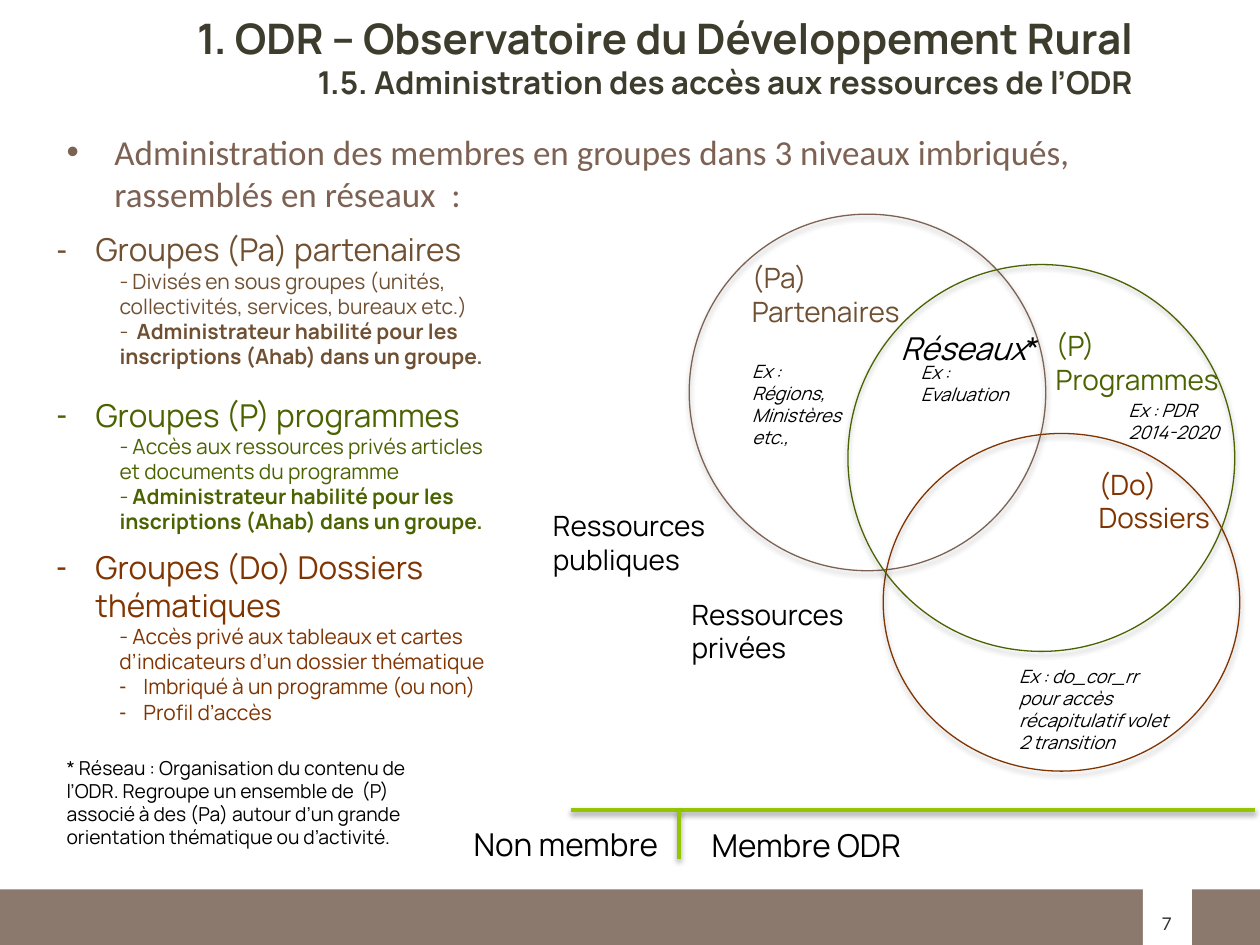
from lxml.etree import SubElement
from pptx import Presentation
from pptx.dml.color import RGBColor
from pptx.enum.shapes import MSO_CONNECTOR, MSO_SHAPE
from pptx.enum.text import MSO_ANCHOR, MSO_AUTO_SIZE, PP_ALIGN
from pptx.oxml.ns import qn
from pptx.util import Inches, Pt

# Grid: 100 columns by 75 rows of square cells
COLS, ROWS = 100, 75
CELL = Inches(10) // COLS
BLACK, WHITE, TAUPE = "000000", "FFFFFF", "7D6253"
BROWN, GREEN, RUST, LIME = "705032", "4A6300", "803400", "94C600"

deck = Presentation()
deck.slide_width, deck.slide_height = COLS * CELL, ROWS * CELL
slide = deck.slides.add_slide(deck.slide_layouts[6])
shapes = slide.shapes


def color(code):
    return RGBColor.from_string(code)


def place(box, x, y, w=0, h=0):
    """Grid lengths inside a box, turned into slide lengths."""
    return [round(n * CELL) for n in (box[0] + x, box[1] + y, w, h)]


def style(run, tone, size, name="Manrope", **form):
    form.update(size=Pt(size), name=name)
    for key, val in form.items():
        setattr(run.font, key, val)
    run.font.color.rgb = color(tone)


def indent(para, left, hang=0, mark=None):
    props = para._p.get_or_add_pPr()
    props.set("marL", str(Inches(left)))
    props.set("indent", str(Inches(-hang)))
    if mark:
        SubElement(props, qn("a:buFont")).set("typeface", "Arial")
        SubElement(props, qn("a:buChar")).set("char", mark)


def frame(box, spot, wrap=True):
    text = shapes.add_textbox(*place(box, *spot)).text_frame
    form = dict(word_wrap=wrap, auto_size=MSO_AUTO_SIZE.NONE,
                vertical_anchor=MSO_ANCHOR.TOP)
    for key, val in form.items():
        setattr(text, key, val)
    return text


def add_para(text, first):
    return text.paragraphs[0] if first else text.add_paragraph()


def label(box, spot, lines, tone, size, wrap=True, align=PP_ALIGN.LEFT, **form):
    text = frame(box, spot, wrap)
    for i, line in enumerate(lines):
        para = add_para(text, i == 0)
        para.alignment = align
        run = para.add_run()
        run.text = line
        style(run, tone, size, **form)
    return text


def shade(shape, alpha, drop):
    fx = SubElement(shape._element.spPr, qn("a:effectLst"))
    glow = SubElement(fx, qn("a:outerShdw"), blurRad=str(Pt(3.1)),
                      dist=str(Pt(drop)), dir="5400000", rotWithShape="0")
    tint = SubElement(glow, qn("a:srgbClr"), val=BLACK)
    SubElement(tint, qn("a:alpha"), val=str(alpha * 1000))


def header(box):
    text = frame(box, (0, 0, box[2], 5.4))
    para = text.paragraphs[0]
    para.alignment = PP_ALIGN.RIGHT
    rows = [("1. ODR – Observatoire du Développement Rural", 24),
            ("1.5. Administration des accès aux ressources de l’ODR", 18)]
    for i, (words, size) in enumerate(rows):
        if i:
            para.add_line_break()
        run = para.add_run()
        run.text = words
        style(run, "3E3D2D", size, bold=True)


def intro(box):
    text = label(box, (0, 0, box[2], box[3]),
                 ["Administration des membres en groupes dans 3 niveaux "
                  "imbriqués, rassemblés en réseaux  :"], TAUPE, 20, name="Calibri")
    indent(text.paragraphs[0], 0.38, 0.38, "•")


def groups(box):
    admin = "Administrateur habilité pour les inscriptions (Ahab) dans un groupe."
    # Each item: lead, bold words, left, hang, bullet
    plain = (0.5, 0, None)
    dash = (0.69, 0.19, "-")
    parts = [
        (0, 36.2, 12.1, BROWN, "Groupes (Pa) partenaires", [
            ("- Divisés en sous groupes (unités, collectivités, services, "
             "bureaux etc.)", "", plain),
            ("-  ", admin, plain)]),
        (13.1, 36.2, 12.1, GREEN, "Groupes (P) programmes", [
            ("- Accès aux ressources privés articles et documents du programme",
             "", plain),
            ("- ", admin, plain)]),
        (25.2, 39.4, 15.1, RUST, "Groupes (Do) Dossiers thématiques", [
            ("- Accès privé aux tableaux et cartes d’indicateurs d’un dossier "
             "thématique", "", plain),
            ("Imbriqué à un programme (ou non)", "", dash),
            ("Profil d’accès", "", dash)]),
    ]
    for y, w, h, tone, head, items in parts:
        text = label(box, (0, y, w, h), [head], tone, 18)
        indent(text.paragraphs[0], 0.31, 0.31, "-")
        for lead, strong, inset in items:
            para = text.add_paragraph()
            para.level = 1
            indent(para, *inset)
            for words, bold in ((lead, False), (strong, True)):
                if words:
                    run = para.add_run()
                    run.text = words
                    style(run, tone, 12, bold=bold)
    # Footnote
    label(box, (0.8, 41.7, 33.1, 8.4),
          ["* Réseau : Organisation du contenu de l’ODR. Regroupe un ensemble "
           "de  (P) associé à des (Pa) autour d’un grande orientation "
           "thématique ou d’activité."], BLACK, 11)


def circles(box):
    for x, y, w, h, tone in [(0, 0, 28.3, 28.3, TAUPE),
                             (15.4, 17.4, 28.3, 26.8, RUST),
                             (12.6, 4, 30.7, 30.7, GREEN)]:
        ring = shapes.add_shape(MSO_SHAPE.OVAL, *place(box, x, y, w, h))
        ring.fill.background()
        ring.line.color.rgb = color(tone)
        ring.line.width = Pt(0.75)
        shade(ring, 35, 1.8)
    # Names of the sets
    for x, y, w, lines, tone in [(4, 3.2, 15, ["(Pa)", "Partenaires"], BROWN),
                                 (28.1, 8.6, 16.5, ["(P)", "Programmes"], GREEN),
                                 (31.5, 19.6, 16.5, ["(Do)", "Dossiers"], RUST)]:
        label(box, (x, y, w, 6.4), lines, tone, 16)
    # Overlap of the first two
    net = label(box, (15.8, 8.6, 13.4, 4), ["Réseaux"], BLACK, 18, italic=True)
    star = net.paragraphs[0].add_run()
    star.text = "*"
    style(star, BLACK, 18, italic=False)
    # Examples
    for x, y, w, h, lines in [
            (4, 11.1, 9.2, 8.1, ["Ex : Régions, Ministères etc.,"]),
            (17.4, 11.2, 9.4, 4.5, ["Ex : Evaluation"]),
            (33.9, 14.2, 9.5, 4.5, ["Ex : PDR 2014-2020"]),
            (25.2, 35.3, 14.3, 8.1, ["Ex : do_cor_rr pour accès",
                                     "récapitulatif volet 2 transition"])]:
        label(box, (x, y, w, h), lines, BLACK, 10.5, italic=True)


def access(box):
    # Scale with its divider
    for x, y, w, h in [(8.7, 24.4, 54.3, 0), (17.3, 24.4, 0, 3.9)]:
        left, top, wide, tall = place(box, x, y, w, h)
        rule = shapes.add_connector(MSO_CONNECTOR.STRAIGHT, left, top,
                                    left + wide, top + tall)
        rule.line.color.rgb = color(LIME)
        rule.line.width = Pt(2)
        shade(rule, 38, 1.6)
    label(box, (0, 25.1, 18.1, 4), ["Non membre"], BLACK, 18)
    label(box, (18.9, 25.2, 17.6, 4), ["Membre ODR"], BLACK, 18, wrap=False)
    # Kinds of resources
    label(box, (6.3, 0, 14.2, 6.4), ["Ressources publiques"], BLACK, 16)
    label(box, (17.3, 7, 14.2, 6.4), ["Ressources", "privées"], BLACK, 16)


def footer(box):
    for x, y, w, h, tone in [(0, 0.9, box[2], box[3] - 0.9, "8B796D"),
                             (90.7, 0, 3.9, box[3], WHITE)]:
        band = shapes.add_shape(MSO_SHAPE.RECTANGLE, *place(box, x, y, w, h))
        band.shadow.inherit = False
        band.fill.solid()
        band.fill.fore_color.rgb = color(tone)
        band.line.fill.background()
    label(box, (90.2, 2.3, 4.8, 2.6), ["7"], "333333", 10,
          align=PP_ALIGN.CENTER, name="Lato")


footer((0, 69.7, COLS, 5.3))
header((5, 0.5, 85.9, 8))
intro((4.3, 9.9, 89.5, 7.9))
circles((54.7, 17, 43.7, 44.2))
access((36.6, 39.9, 63, 29.2))
groups((3.5, 17.8, 39.4, 50.1))
deck.save("out.pptx")
